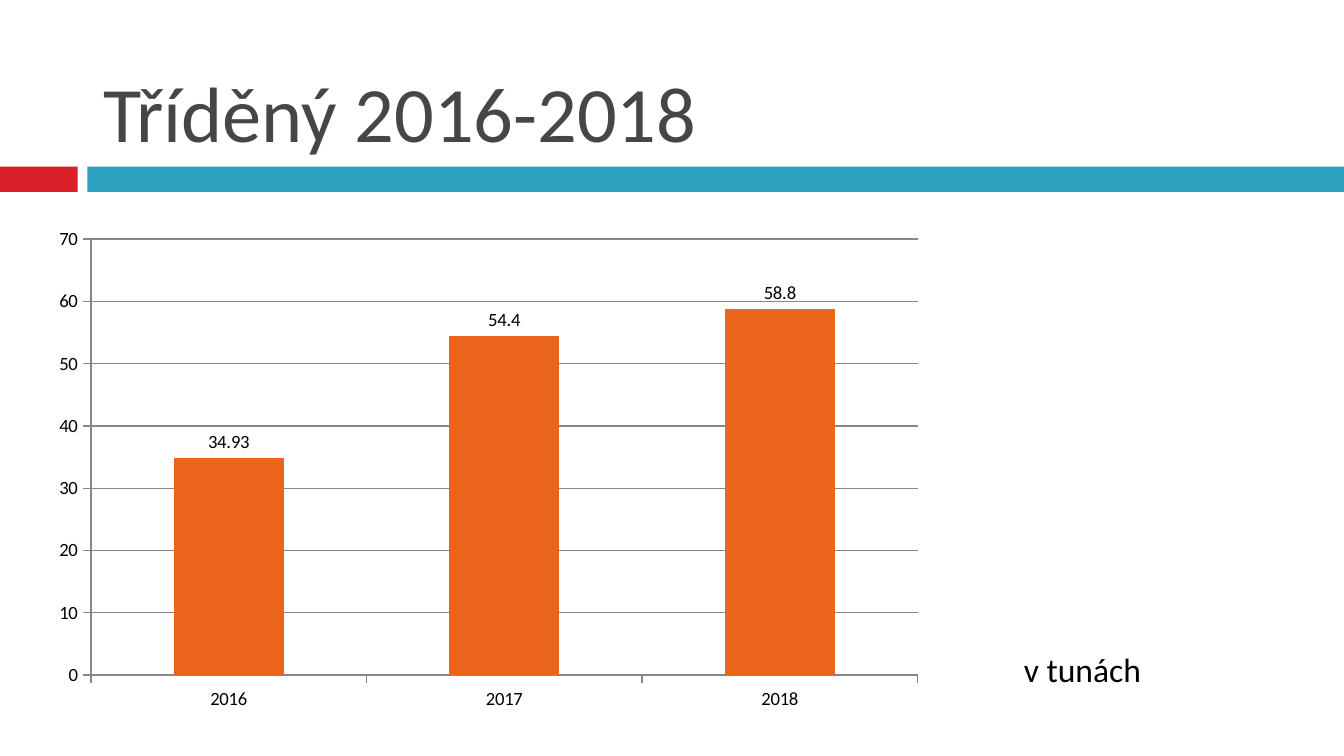
from dataclasses import dataclass

from lxml import etree
from pptx import Presentation
from pptx import util as u
from pptx.chart.data import CategoryChartData
from pptx.dml.color import RGBColor
from pptx.enum import chart as ch, shapes, text
from pptx.oxml.ns import qn


@dataclass(frozen=True)
class Theme:
    font: str = "Calibri"
    title_size: int = 42
    note_size: int = 18
    chart_size: int = 10
    title: str = "464646"
    ink: str = "000000"
    red: str = "DA1F28"
    teal: str = "2DA2BF"
    bar: str = "EB641B"
    grid: str = "878787"


THEME = Theme()
SLIDE_SIZE = (25.4, 14.29)

# Boxes are left, top, width, height in centimetres.
BANDS = [
    ((0, 3.15, 1.47, 0.48), THEME.red),
    ((1.65, 3.15, 23.75, 0.48), THEME.teal),
]
TEXTS = [
    ("Tříděný 2016-2018", (1.7, 0.33, 22.66, 2.79), THEME.title_size,
     THEME.title, text.MSO_ANCHOR.BOTTOM),
    ("v tunách", (19.1, 12.14, 4.39, 1.02), THEME.note_size,
     THEME.ink, text.MSO_ANCHOR.TOP),
]
CHART_BOX = (0.71, 2.13, 17.4, 11.61)
PLOT_AREA = {"x": 0.058, "y": 0.206, "w": 0.898, "h": 0.71}
TONNES = {"2016": 34.93, "2017": 54.4, "2018": 58.8}


def lengths(box):
    return [u.Cm(value) for value in box]


def style_font(font, size, color):
    font.name = THEME.font
    font.size = u.Pt(size)
    font.color.rgb = RGBColor.from_string(color)


def style_line(line):
    line.color.rgb = RGBColor.from_string(THEME.grid)
    line.width = u.Pt(0.75)


def add_band(slide, box, color):
    shape = slide.shapes.add_shape(shapes.MSO_SHAPE.RECTANGLE, *lengths(box))
    shape.shadow.inherit = False
    shape.fill.solid()
    shape.fill.fore_color.rgb = RGBColor.from_string(color)
    shape.line.fill.background()


def add_text(slide, content, box, size, color, anchor):
    frame = slide.shapes.add_textbox(*lengths(box)).text_frame
    frame.word_wrap = True
    frame.vertical_anchor = anchor
    run = frame.paragraphs[0].add_run()
    run.text = content
    style_font(run.font, size, color)


def set_plot_area(chart):
    """Fix the inner plot area as fractions of the chart's size."""
    plot_area = chart.plots[0]._element.getparent()
    layout = plot_area.find(qn("c:layout"))
    if layout is None:
        layout = etree.Element(qn("c:layout"))
        plot_area.insert(0, layout)
    manual = etree.SubElement(layout, qn("c:manualLayout"))
    settings = {"layoutTarget": "inner", "xMode": "edge", "yMode": "edge", **PLOT_AREA}
    for name, value in settings.items():
        etree.SubElement(manual, qn(f"c:{name}")).set("val", str(value))


def add_column_chart(slide):
    data = CategoryChartData()
    data.categories = list(TONNES)
    data.add_series("Series 1", list(TONNES.values()))
    chart = slide.shapes.add_chart(
        ch.XL_CHART_TYPE.COLUMN_CLUSTERED, *lengths(CHART_BOX), data).chart
    chart.has_title = False
    chart.has_legend = False
    style_font(chart.font, THEME.chart_size, THEME.ink)

    for axis in (chart.category_axis, chart.value_axis):
        axis.major_tick_mark = ch.XL_TICK_MARK.OUTSIDE
        style_line(axis.format.line)
    axis = chart.value_axis
    axis.minimum_scale, axis.maximum_scale, axis.major_unit = 0, 70, 10
    axis.has_major_gridlines = True
    style_line(axis.major_gridlines.format.line)

    plot = chart.plots[0]
    plot.gap_width = 150
    plot.vary_by_categories = False
    series = plot.series[0]
    series.format.fill.solid()
    series.format.fill.fore_color.rgb = RGBColor.from_string(THEME.bar)
    labels = series.data_labels
    labels.show_value = True
    labels.position = ch.XL_LABEL_POSITION.OUTSIDE_END
    style_font(labels.font, THEME.chart_size, THEME.ink)
    set_plot_area(chart)


def main():
    presentation = Presentation()
    presentation.slide_width, presentation.slide_height = lengths(SLIDE_SIZE)
    slide = presentation.slides.add_slide(presentation.slide_layouts[6])
    for band in BANDS:
        add_band(slide, *band)
    for item in TEXTS:
        add_text(slide, *item)
    add_column_chart(slide)
    presentation.save("out.pptx")


if __name__ == "__main__":
    main()
